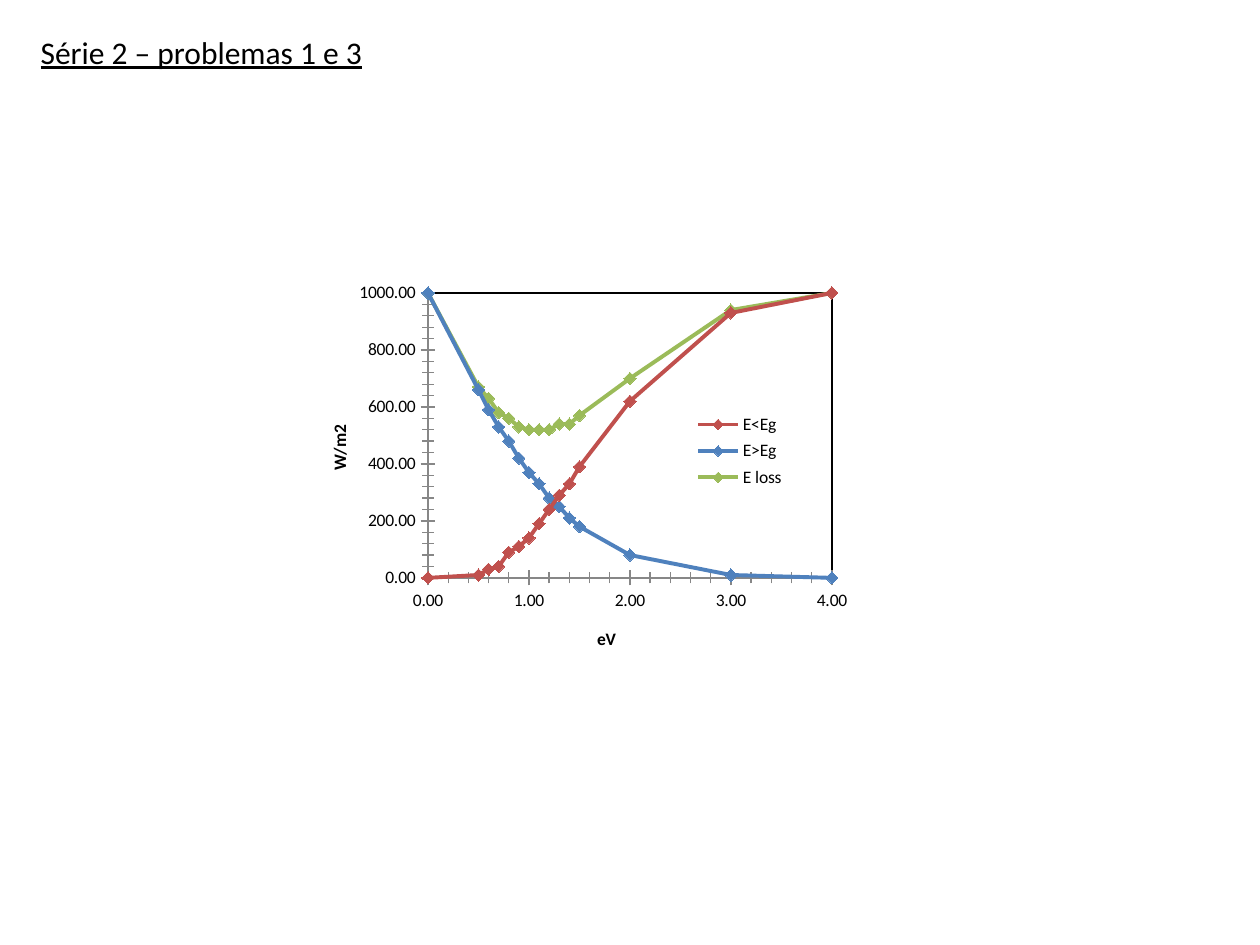
from dataclasses import dataclass
from lxml import etree
from pptx import Presentation
from pptx.chart.data import XyChartData
from pptx.dml.color import RGBColor
from pptx.enum.chart import (XL_CHART_TYPE, XL_LEGEND_POSITION as LegendPosition,
                             XL_MARKER_STYLE as MarkerStyle, XL_TICK_MARK as TickMark)
from pptx.enum.text import MSO_ANCHOR, MSO_AUTO_SIZE, PP_ALIGN
from pptx.oxml import parse_xml
from pptx.oxml.ns import nsdecls, qn
from pptx.util import Emu, Pt

PX = 914400 // 126
SLIDE = (1260, 945)
TITLE = "Série 2 – problemas 1 e 3"
TITLE_BOX = (28, 26, 1204, 51)
RULE_LENGTH = 1155
CHART_BOX = (294, 276, 672, 393)
PLOT_BOX = (428, 293, 404, 285)
LEGEND_BOX = (690, 408, 100, 86)
ENERGIES = [0, 0.5, 0.6, 0.7, 0.8, 0.9, 1, 1.1, 1.2, 1.3, 1.4, 1.5, 2, 3, 4]
SERIES = [
    ("E<Eg", "C0504D", [0, 10, 30, 40, 90, 110, 140, 190, 240, 290, 330, 390, 620, 930, 1000]),
    ("E>Eg", "4F81BD", [1000, 660, 590, 530, 480, 420, 370, 330, 280, 250, 210, 180, 80, 10, 0]),
    ("E loss", "9BBB59", [1000, 670, 630, 580, 560, 530, 520, 520, 520, 540, 540, 570, 700, 940, 1000]),
]
AXES = [
    ("category_axis", "eV", 4, 1, (594, 624)),
    ("value_axis", "W/m2", 1000, 200, (325, 422)),
]


@dataclass(frozen=True)
class Theme:
    font: str = "Calibri"
    text: str = "000000"
    axis: str = "878787"
    title_size: int = 18
    chart_size: int = 10
    curve_width: float = 2.25
    thin_width: float = 0.75
    marker_size: int = 7


THEME = Theme()


def px(*lengths):
    return [Emu(length * PX) for length in lengths]


def style_font(font, size, bold=False):
    font.name, font.size, font.bold = THEME.font, Pt(size), bold
    font.color.rgb = RGBColor.from_string(THEME.text)


def style_line(line, color, width):
    line.color.rgb = RGBColor.from_string(color)
    line.width = Pt(width)


def place(element, index, box, inner=False):
    for old in element.findall(qn("c:layout")):
        element.remove(old)
    layout = etree.Element(qn("c:layout"))
    manual = etree.SubElement(layout, qn("c:manualLayout"))
    left, top, width, height = CHART_BOX
    fractions = [(box[0] - left) / width, (box[1] - top) / height]
    fractions += [length / total for length, total in zip(box[2:], (width, height))]
    settings = [("layoutTarget", "inner")] if inner else []
    settings += [("xMode", "edge"), ("yMode", "edge")]
    settings += [(name, f"{value:.4f}") for name, value in zip("xywh", fractions)]
    for name, value in settings:
        etree.SubElement(manual, qn(f"c:{name}")).set("val", value)
    element.insert(index, layout)


def add_title(slide):
    shape = slide.shapes.title
    shape.left, shape.top, shape.width, shape.height = px(*TITLE_BOX)
    frame = shape.text_frame
    frame.text = TITLE + "\t"
    frame.auto_size = MSO_AUTO_SIZE.NONE
    frame.vertical_anchor = MSO_ANCHOR.MIDDLE
    paragraph = frame.paragraphs[0]
    paragraph.alignment = PP_ALIGN.LEFT
    for run in paragraph.runs:
        style_font(run.font, THEME.title_size)
        run.font.underline = True
    tabs = etree.SubElement(paragraph._p.get_or_add_pPr(), qn("a:tabLst"))
    etree.SubElement(tabs, qn("a:tab"), pos=str(RULE_LENGTH * PX), algn="l")


def style_axis(axis, title, maximum, step, position):
    axis.minimum_scale, axis.maximum_scale = 0, maximum
    axis.major_unit, axis.minor_unit = step, step / 5
    axis.has_major_gridlines = False
    axis.major_tick_mark = axis.minor_tick_mark = TickMark.CROSS
    axis.tick_labels.number_format = "0.00"
    axis.tick_labels.number_format_is_linked = False
    style_font(axis.tick_labels.font, THEME.chart_size)
    style_line(axis.format.line, THEME.axis, THEME.thin_width)
    frame = axis.axis_title.text_frame
    frame.text = title
    style_font(frame.paragraphs[0].runs[0].font, THEME.chart_size, bold=True)
    place(axis.axis_title._element, 1, position)


def add_chart(slide):
    data = XyChartData(number_format="0.00")
    for name, _, values in SERIES:
        series = data.add_series(name)
        for energy, value in zip(ENERGIES, values):
            series.add_data_point(energy, value)
    chart = slide.shapes.add_chart(XL_CHART_TYPE.XY_SCATTER_SMOOTH, *px(*CHART_BOX), data).chart
    chart.has_title = False
    style_font(chart.font, THEME.chart_size)
    chart.plots[0].vary_by_categories = False
    for series, (_, color, _) in zip(chart.plots[0].series, SERIES):
        series.smooth = True
        style_line(series.format.line, color, THEME.curve_width)
        marker = series.marker
        marker.style, marker.size = MarkerStyle.DIAMOND, THEME.marker_size
        marker.format.fill.solid()
        marker.format.fill.fore_color.rgb = RGBColor.from_string(color)
        style_line(marker.format.line, color, THEME.thin_width)
    for axis_name, *settings in AXES:
        style_axis(getattr(chart, axis_name), *settings)
    chart.has_legend = True
    chart.legend.position = LegendPosition.RIGHT
    chart.legend.include_in_layout = False
    style_font(chart.legend.font, THEME.chart_size)
    place(chart.legend._element, 1, LEGEND_BOX)
    plot_area = chart._chartSpace.chart.plotArea
    place(plot_area, 0, PLOT_BOX, inner=True)
    plot_area.append(parse_xml(
        f'<c:spPr {nsdecls("c", "a")}><a:noFill/><a:ln w="{Pt(THEME.thin_width)}">'
        f'<a:solidFill><a:srgbClr val="{THEME.text}"/></a:solidFill></a:ln></c:spPr>'))


def main():
    presentation = Presentation()
    presentation.slide_width, presentation.slide_height = px(*SLIDE)
    slide = presentation.slides.add_slide(presentation.slide_layouts[5])
    add_title(slide)
    add_chart(slide)
    presentation.save("out.pptx")


if __name__ == "__main__":
    main()
